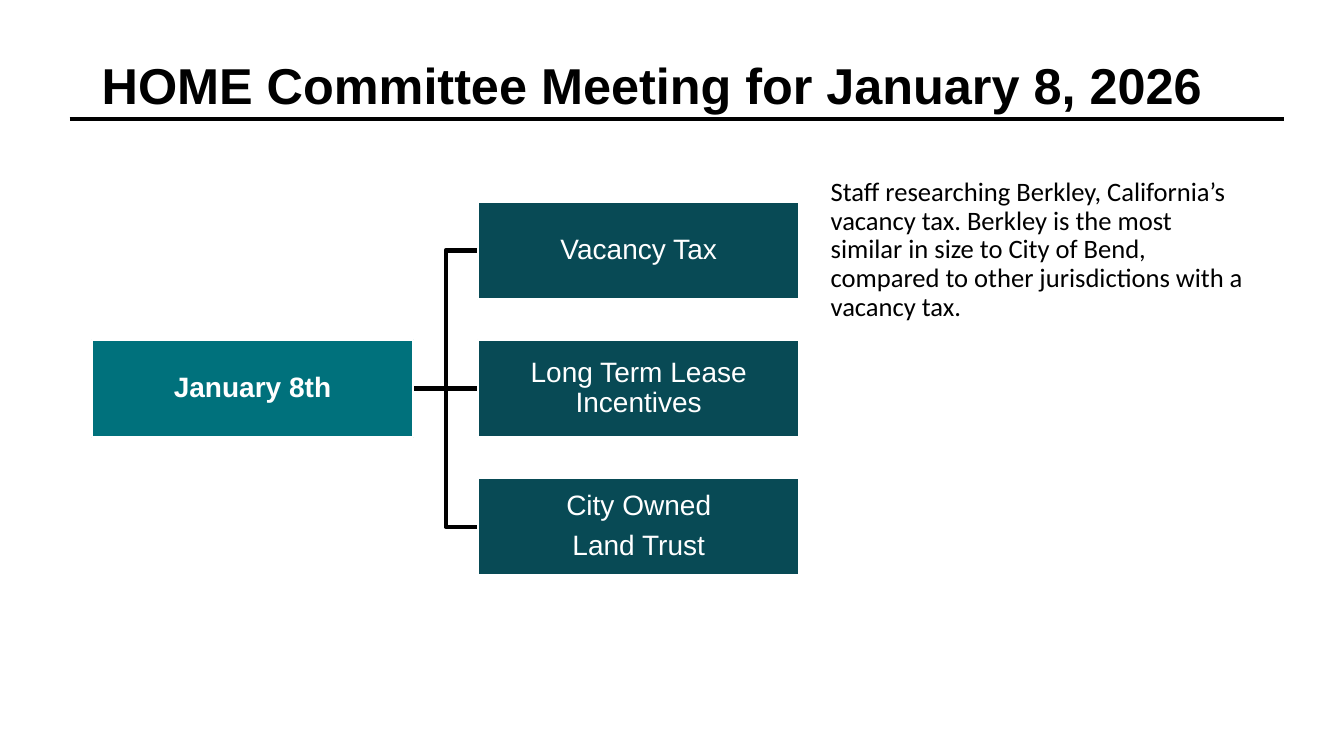
import pptx
import pptx.dml.color
import pptx.enum.shapes
import pptx.enum.text
import pptx.oxml.ns
import pptx.util
from lxml import etree

Inches = pptx.util.Inches
Pt = pptx.util.Pt
ANCHOR = pptx.enum.text.MSO_ANCHOR
ALIGN = pptx.enum.text.PP_ALIGN
CONNECTOR = pptx.enum.shapes.MSO_CONNECTOR


def color(hex_code):
    return pptx.dml.color.RGBColor.from_string(hex_code)


def write(box, lines, size, font, ink, bold=False, align=ALIGN.LEFT, after=0):
    frame = box.text_frame
    frame.word_wrap = True
    for number, line in enumerate(lines):
        para = frame.add_paragraph() if number else frame.paragraphs[0]
        para.alignment = align
        para.line_spacing = 0.9
        para.space_after = Pt(after)
        span = para.add_run()
        span.text = line
        span.font.size = Pt(size)
        span.font.name = font
        span.font.bold = bold
        span.font.color.rgb = color(ink)


deck = pptx.Presentation()
deck.slide_width = Inches(13.33)
deck.slide_height = Inches(7.5)
page = deck.slides.add_slide(deck.slide_layouts[6])

# Grid of the tree
LEFT, TOP = 0.91, 2
BOX_WIDTH, BOX_HEIGHT = 3.19, 0.97
COLUMN_STEP, ROW_STEP = 3.83, 1.37

# Title
title = page.shapes.add_textbox(Inches(LEFT), Inches(0.54), Inches(11.5), Inches(0.65))
title.text_frame.vertical_anchor = ANCHOR.BOTTOM
write(title, ["HOME Committee Meeting for January 8, 2026"], 36, "Arial", "000000", bold=True)

# Title rule and tree branches, placed behind the boxes
kinds = [CONNECTOR.STRAIGHT, CONNECTOR.ELBOW, CONNECTOR.STRAIGHT, CONNECTOR.ELBOW]
lines = []
for kind in kinds:
    line = page.shapes.add_connector(kind, Inches(0.69), Inches(1.18), Inches(12.74), Inches(1.18))
    line.line.color.rgb = color("000000")
    line.line.width = Pt(3)
    etree.SubElement(line._element.spPr, pptx.oxml.ns.qn("a:effectLst"))
    lines.append(line)
branches = lines[1:]

# Boxes: column, row, fill, bold, lines of text
nodes = [
    (0, 1, "00717C", True, ["January 8th"]),
    (1, 0, "084A55", False, ["Vacancy Tax"]),
    (1, 1, "084A55", False, ["Long Term Lease Incentives"]),
    (1, 2, "084A55", False, ["City Owned", "Land Trust"]),
]
boxes = []
for column, row, fill, bold, words in nodes:
    box = page.shapes.add_shape(
        pptx.enum.shapes.MSO_SHAPE.RECTANGLE,
        Inches(LEFT + column * COLUMN_STEP), Inches(TOP + row * ROW_STEP),
        Inches(BOX_WIDTH), Inches(BOX_HEIGHT))
    box.shadow.inherit = False
    box.fill.solid()
    box.fill.fore_color.rgb = color(fill)
    box.line.color.rgb = color("FFFFFF")
    box.line.width = Pt(1.5)
    frame = box.text_frame
    frame.margin_left = frame.margin_right = Inches(0.01)
    frame.margin_top = frame.margin_bottom = Inches(0.01)
    frame.vertical_anchor = ANCHOR.MIDDLE
    write(box, words, 20, "Arial", "FFFFFF", bold, ALIGN.CENTER, after=7)
    boxes.append(box)

# Join the meeting date to each topic
meeting, *topics = boxes
for branch, topic in zip(branches, topics):
    branch.begin_connect(meeting, 3)
    branch.end_connect(topic, 1)

# Staff note
note = page.shapes.add_textbox(Inches(8.14), Inches(1.72), Inches(4.35), Inches(4.6))
write(note, ["Staff researching Berkley, California’s vacancy tax. Berkley is the most "
             "similar in size to City of Bend, compared to other jurisdictions with a "
             "vacancy tax."], 19, "Calibri", "000000")

deck.save("out.pptx")
